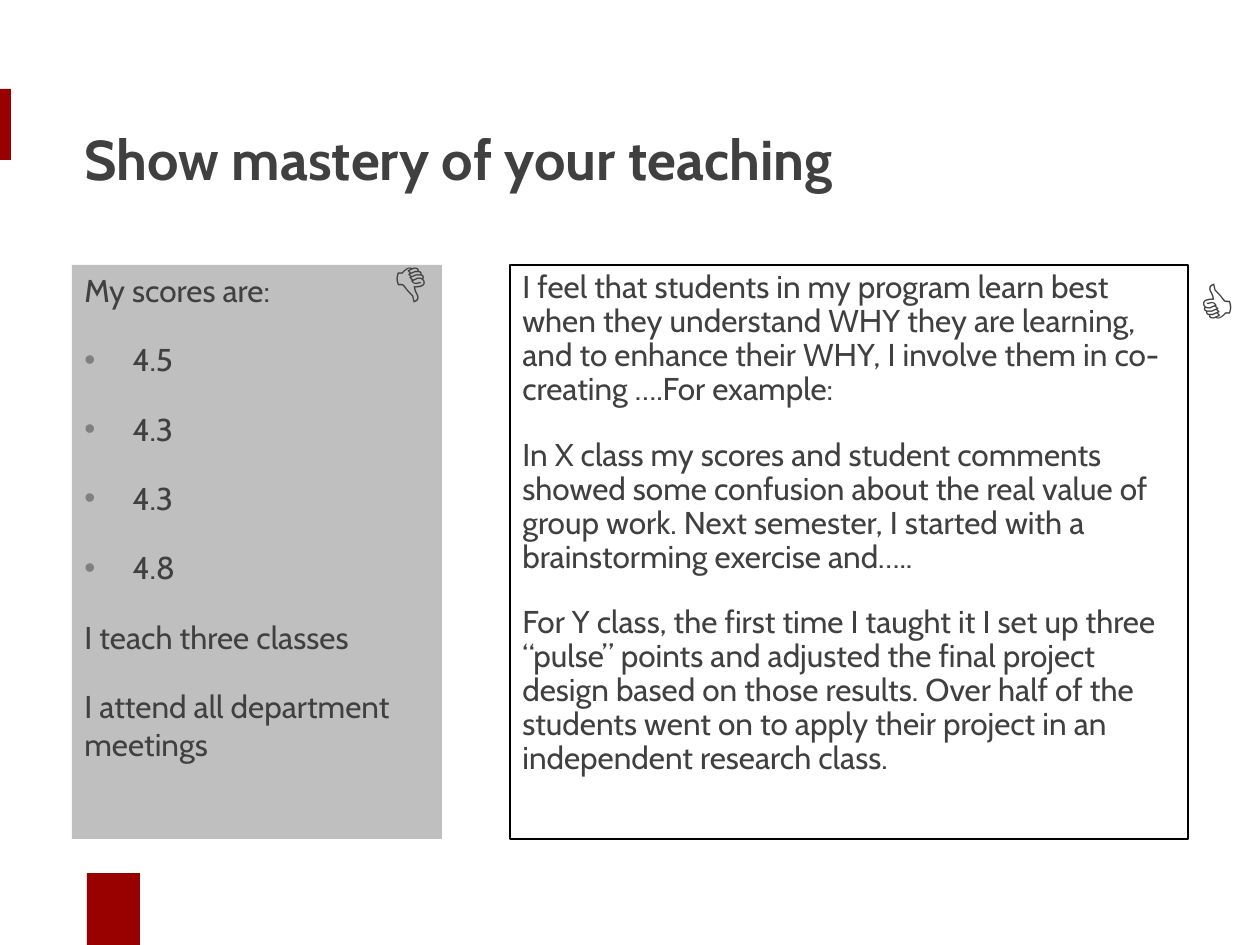
"""Build a slide contrasting weak and strong ways to show teaching mastery."""
from lxml import etree
from pptx import Presentation
from pptx.dml.color import RGBColor
from pptx.enum.shapes import MSO_SHAPE
from pptx.enum.text import MSO_ANCHOR, PP_ALIGN
from pptx.oxml.ns import qn
from pptx.util import Pt

RECT = MSO_SHAPE.RECTANGLE
TOP, MIDDLE = MSO_ANCHOR.TOP, MSO_ANCHOR.MIDDLE
LEFT = PP_ALIGN.LEFT
PX = 914400 / 126
HEX = {"red": "990000", "gray": "BFBFBF", "ink": "404041", "dot": "808080", "black": "000000"}
COLORS = {name: RGBColor.from_string(code) for name, code in HEX.items()}

deck = Presentation()
deck.slide_width, deck.slide_height = round(1260 * PX), round(945 * PX)
slide = deck.slides.add_slide(deck.slide_layouts[6])


def add_box(area, fill=None, line=None):
    box = slide.shapes.add_shape(RECT, *(round(n * PX) for n in area))
    box.shadow.inherit = False
    if fill:
        box.fill.solid()
        box.fill.fore_color.rgb = COLORS[fill]
    else:
        box.fill.background()
    if line:
        box.line.color.rgb = COLORS[line]
        box.line.width = Pt(0.75)
    else:
        box.line.fill.background()
    return box


def write(shape, lines, size, bold=False, after=0, space=1.0, anchor=TOP):
    frame = shape.text_frame
    frame.word_wrap = True
    frame.vertical_anchor = anchor
    frame.text = "\n".join(lines)
    for para in frame.paragraphs:
        para.alignment = LEFT
        para.space_after = Pt(after)
        para.line_spacing = space
        para.font.name = "Cabin"
        para.font.size = Pt(size)
        para.font.bold = bold
        para.font.color.rgb = COLORS["ink"]


for area in [(0, 89, 11, 71), (87, 873, 53, 72)]:
    add_box(area, fill="red")

scores = ["4.5", "4.3", "4.3", "4.8"]
weak = ["My scores are:", *scores, "I teach three classes", "I attend all department meetings"]
strong = [
    "I feel that students in my program learn best when they understand WHY they are learning, "
    "and to enhance their WHY, I involve them in co-creating ….For example:",
    "In X class my scores and student comments showed some confusion about the real value of "
    "group work. Next semester, I started with a brainstorming exercise and…..",
    "For Y class, the first time I taught it I set up three “pulse” points and adjusted the final "
    "project design based on those results. Over half of the students went on to apply their "
    "project in an independent research class.",
]

labels = [
    ((72, 86, 955, 144), "Show mastery of your teaching", 0),
    ((1186, 251, 112, 105), "👍", 0),
    ((330, 231, 112, 105), "👍", 180),
]

left = add_box((72, 265, 370, 574), fill="gray")
write(left, weak, 18, after=18)
for para in left.text_frame.paragraphs[1:1 + len(scores)]:
    props = para._p.get_or_add_pPr()
    props.set("marL", str(round(48 * PX)))
    props.set("indent", str(round(-48 * PX)))
    tint = etree.SubElement(props, qn("a:buClr"))
    etree.SubElement(tint, qn("a:srgbClr"), val=HEX["dot"])
    etree.SubElement(props, qn("a:buFont"), typeface="Arial")
    etree.SubElement(props, qn("a:buChar"), char="•")

right = add_box((510, 265, 678, 574), line="black")
write(right, strong, 18, after=18, space=0.9)

for area, text, turn in labels:
    label = slide.shapes.add_textbox(*(round(n * PX) for n in area))
    label.rotation = turn
    write(label, [text], 32, bold=True, anchor=MIDDLE)

deck.save("out.pptx")
